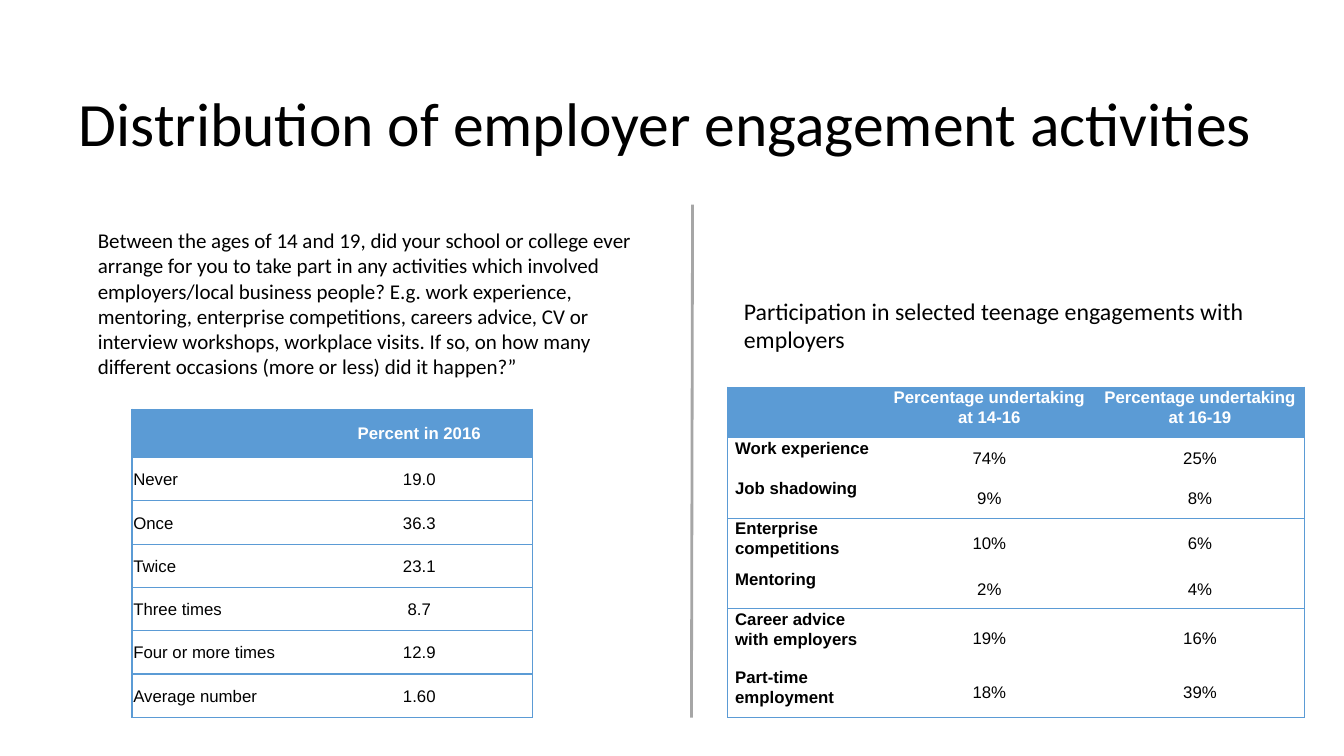
from dataclasses import dataclass

from lxml.etree import SubElement
from pptx import Presentation
from pptx.dml.color import RGBColor
from pptx.enum.shapes import MSO_CONNECTOR
from pptx.enum.text import MSO_ANCHOR, PP_ALIGN
from pptx.oxml.ns import qn
from pptx.util import Emu, Inches, Pt

BLACK = RGBColor(0x00, 0x00, 0x00)
WHITE = RGBColor(0xFF, 0xFF, 0xFF)
BLUE = RGBColor(0x5B, 0x9B, 0xD5)
GREY = RGBColor(0xA6, 0xA6, 0xA6)
SLIDE_W, SLIDE_H = Inches(13.333), Inches(7.5)
QUESTION = (
    "Between the ages of 14 and 19, did your school or college ever arrange for you "
    "to take part in any activities which involved employers/local business people? "
    "E.g. work experience, mentoring, enterprise competitions, careers advice, CV or "
    "interview workshops, workplace visits. If so, on how many different occasions "
    "(more or less) did it happen?”"
)


@dataclass(frozen=True)
class Box:
    """A rectangle in percent of the slide's width and height."""
    x: float
    y: float
    w: float
    h: float


@dataclass(frozen=True)
class Grid:
    """A table: its place, its text, its rules and the look of its label column."""
    x: float
    y: float
    cols: list[float]
    rows: list[float]
    cells: list[list[str]]
    ruled: set[int]
    line: float
    inset: float
    value_inset: float
    bold_labels: bool
    label_anchor: MSO_ANCHOR
    header_anchor: MSO_ANCHOR
    body_fill: RGBColor | None


ACTIVITIES = Grid(
    54.15, 51.2, [11.55, 15.83, 15.53],
    [6.67, 5.33, 5.33, 6.67, 5.33, 7.73, 6.67],
    [["", "Percentage undertaking at 14-16", "Percentage undertaking at 16-19"],
     ["Work experience", "74%", "25%"],
     ["Job shadowing", "9%", "8%"],
     ["Enterprise competitions", "10%", "6%"],
     ["Mentoring", "2%", "4%"],
     ["Career advice with employers", "19%", "16%"],
     ["Part-time employment", "18%", "39%"]],
    ruled={0, 1, 3, 5, 7}, line=0.75, inset=0.55, value_inset=0.55, bold_labels=True,
    label_anchor=MSO_ANCHOR.TOP, header_anchor=MSO_ANCHOR.TOP, body_fill=None)

OCCASIONS = Grid(
    9.82, 54.13, [12.98, 16.8], [6.4] + [5.73] * 6,
    [["", "Percent in 2016"],
     ["Never", "19.0"],
     ["Once", "36.3"],
     ["Twice", "23.1"],
     ["Three times", "8.7"],
     ["Four or more times", "12.9"],
     ["Average number", "1.60"]],
    ruled=set(range(8)), line=1, inset=0.1, value_inset=0, bold_labels=False,
    label_anchor=MSO_ANCHOR.MIDDLE, header_anchor=MSO_ANCHOR.MIDDLE, body_fill=WHITE)


def across(share: float) -> Emu:
    """Turn a percentage of the slide's width into a length."""
    return Emu(round(SLIDE_W * share / 100))


def down(share: float) -> Emu:
    """Turn a percentage of the slide's height into a length."""
    return Emu(round(SLIDE_H * share / 100))


def write(tf, text: str, *, size: float, font: str = "Calibri", color: RGBColor = BLACK,
          bold: bool = False, align: PP_ALIGN = PP_ALIGN.LEFT, spacing: float = 1) -> None:
    """Put one formatted paragraph into a text frame."""
    p = tf.paragraphs[0]
    p.alignment, p.line_spacing = align, spacing
    p.space_before = Pt(0)
    f = p.font
    if text:
        r = p.add_run()
        r.text = text
        f = r.font
    f.name, f.size, f.bold, f.color.rgb = font, Pt(size), bold, color


def fill_box(sp, box: Box, text: str, size: float, *, indent: float = 0,
             anchor: MSO_ANCHOR = MSO_ANCHOR.TOP) -> None:
    """Place a text shape and write its text."""
    sp.left, sp.top = across(box.x), down(box.y)
    sp.width, sp.height = across(box.w), down(box.h)
    tf = sp.text_frame
    tf.word_wrap, tf.vertical_anchor = True, anchor
    tf.margin_top = tf.margin_bottom = tf.margin_right = across(0.75)
    tf.margin_left = across(0.75 + indent)
    write(tf, text, size=size)


def set_borders(cell, sides: dict[str, bool], width: float) -> None:
    """Draw the chosen sides of a cell and clear the others."""
    pr = cell._tc.get_or_add_tcPr()
    for side, shown in sides.items():
        ln = SubElement(pr, qn(f"a:ln{side}"), w=str(Pt(width)))
        if shown:
            SubElement(SubElement(ln, qn("a:solidFill")), qn("a:srgbClr"), val=str(BLUE))
        else:
            SubElement(ln, qn("a:noFill"))


def draw_cell(cell, grid: Grid, i: int, j: int) -> None:
    """Format one cell by its row and column."""
    header, label = i == 0, j == 0
    set_borders(cell, {"L": label, "R": j == len(grid.cols) - 1,
                       "T": i in grid.ruled, "B": i + 1 in grid.ruled}, grid.line)
    fill = BLUE if header else grid.body_fill
    if fill is None:
        cell.fill.background()
    else:
        cell.fill.solid()
        cell.fill.fore_color.rgb = fill
    cell.margin_left = cell.margin_right = across(grid.inset if label else grid.value_inset)
    cell.margin_top = cell.margin_bottom = 0
    cell.vertical_anchor = (grid.header_anchor if header else
                            grid.label_anchor if label else MSO_ANCHOR.MIDDLE)
    write(cell.text_frame, grid.cells[i][j], size=12, font="Arial", spacing=1.07,
          color=WHITE if header else BLACK, bold=header or (label and grid.bold_labels),
          align=PP_ALIGN.LEFT if label else PP_ALIGN.CENTER)


def draw_table(s, grid: Grid) -> None:
    """Add a table to the slide."""
    table = s.shapes.add_table(
        len(grid.rows), len(grid.cols), across(grid.x), down(grid.y),
        across(sum(grid.cols)), down(sum(grid.rows))).table
    table.first_row = table.horz_banding = False
    for col, share in zip(table.columns, grid.cols):
        col.width = across(share)
    for i, (row, share) in enumerate(zip(table.rows, grid.rows)):
        row.height = down(share)
        for j, cell in enumerate(row.cells):
            draw_cell(cell, grid, i, j)


def draw_divider(s) -> None:
    """Add the line between the two halves of the slide."""
    line = s.shapes.add_connector(MSO_CONNECTOR.STRAIGHT, across(51.53), down(27.07),
                                  across(51.45), down(94.93))
    line.line.color.rgb, line.line.width = GREY, Pt(2)
    SubElement(line._element.spPr, qn("a:effectLst"))


def main() -> None:
    """Build the slide and save it."""
    prs = Presentation()
    prs.slide_width, prs.slide_height = SLIDE_W, SLIDE_H
    s = prs.slides.add_slide(prs.slide_layouts[5])
    fill_box(s.shapes.title, Box(5.1, 6.4, 91.58, 19.33),
             "Distribution of employer engagement activities", 44, anchor=MSO_ANCHOR.MIDDLE)
    fill_box(s.shapes.add_textbox(0, 0, 0, 0), Box(54.6, 37.87, 42.52, 11.07),
             "Participation in selected teenage engagements with employers", 17)
    fill_box(s.shapes.add_textbox(0, 0, 0, 0), Box(5.1, 28.8, 45, 24.53),
             QUESTION, 15, indent=1.43)
    for grid in (ACTIVITIES, OCCASIONS):
        draw_table(s, grid)
    draw_divider(s)
    prs.save("out.pptx")


if __name__ == "__main__":
    main()
